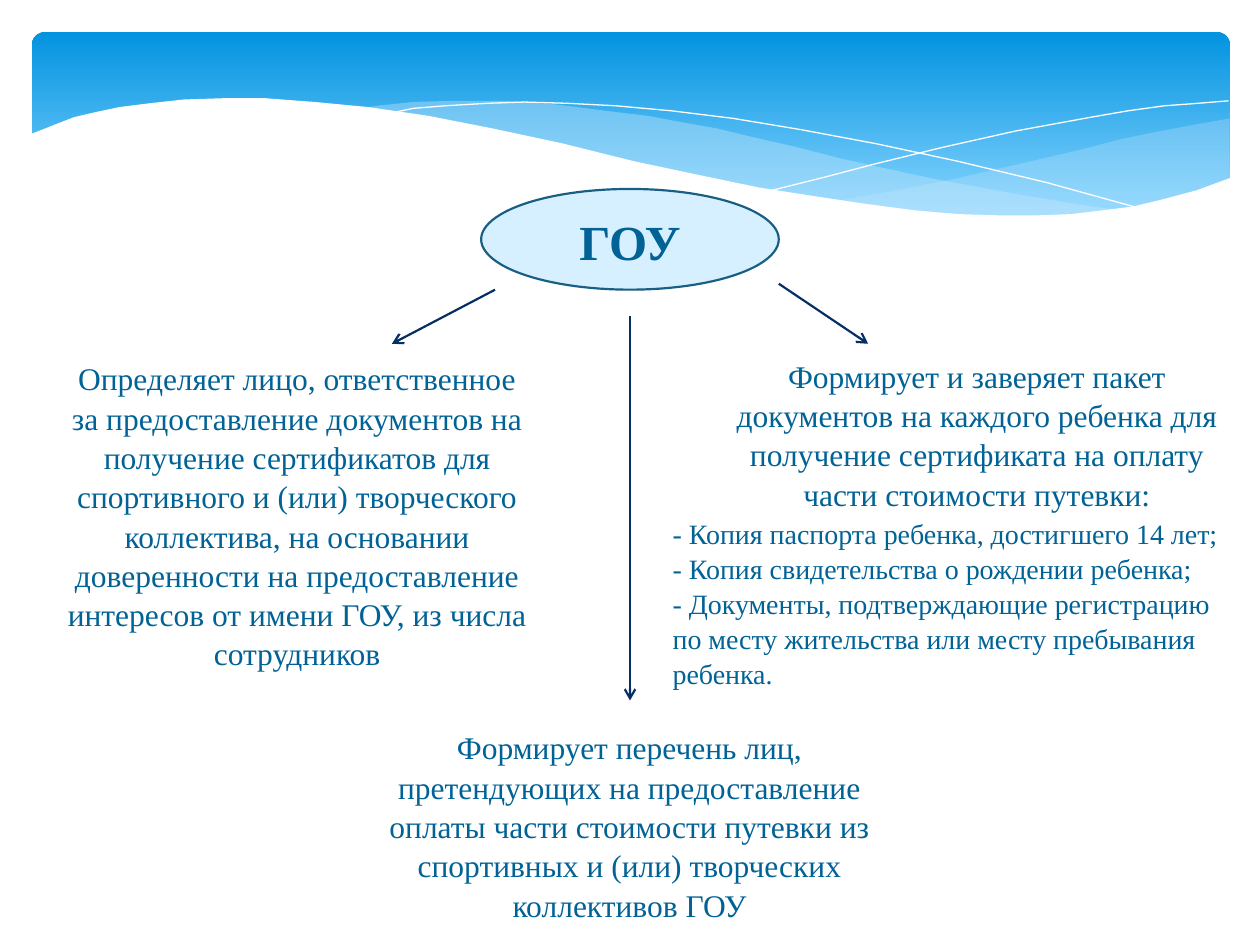
from lxml import etree
from pptx import Presentation, util as u
from pptx.dml.color import RGBColor
from pptx.enum import shapes, text
from pptx.oxml import ns

COLORS = {
    "sky": "0293E0", "light sky": "83D3FE", "wave": "C6E7FC", "white": "FFFFFF",
    "oval": "D6F0FF", "oval line": "195F84", "text": "016296", "arrow": "052E65",
}
COLORS = {name: RGBColor.from_string(value) for name, value in COLORS.items()}
FONT = "Times New Roman"

presentation = Presentation()
presentation.slide_width, presentation.slide_height = u.Cm(25.4), u.Cm(19.05)
slide = presentation.slides.add_slide(presentation.slide_layouts[6])


def write(shape, content, size, alignment, bold=False, spacing=1.04):
    shape.text_frame.word_wrap = True
    shape.text_frame.text = content
    for paragraph in shape.text_frame.paragraphs:
        paragraph.alignment = alignment
        paragraph.line_spacing = spacing
        font = paragraph.runs[0].font
        font.name, font.size, font.bold = FONT, u.Pt(size), bold
        font.color.rgb = COLORS["text"]


# Header panel with a vertical gradient
panel = slide.shapes.add_shape(shapes.MSO_SHAPE.ROUNDED_RECTANGLE,
                               u.Cm(0.64), u.Cm(0.64), u.Cm(24.16), u.Cm(3.96))
panel.adjustments[0] = 0.07
panel.shadow.inherit = False
panel.line.fill.background()
panel.fill.gradient()
panel.fill.gradient_angle = 270
for stop, color, position in zip(panel.fill.gradient_stops, ("sky", "light sky"), (0, 0.9)):
    stop.color.rgb = COLORS[color]
    stop.position = position

# Waves: points in hundredths of 2.54 cm, fill colour, opacity in percent
# A wave without a fill is an open white hairline
waves = [
    ([(976, 94), (948, 99), (921, 104), (891, 110), (861, 118), (805, 131), (753, 143),
      (706, 152), (661, 160), (691, 164), (719, 167), (745, 169), (769, 171), (803, 172),
      (835, 172), (863, 170), (889, 166), (913, 162), (935, 156), (963, 147), (976, 141)],
     "wave", 29),
    ([(893, 167), (866, 164), (807, 154), (741, 142), (668, 126), (629, 116), (598, 109),
      (569, 102), (541, 97), (514, 92), (489, 89), (442, 83), (399, 80), (361, 80),
      (328, 81), (299, 84), (286, 86), (323, 90), (362, 97), (404, 106), (449, 116),
      (530, 135), (584, 146), (634, 156), (680, 163), (722, 168), (761, 171), (796, 173),
      (828, 173), (857, 171)],
     "wave", 40),
    ([(309, 90), (328, 86), (353, 84), (387, 82), (416, 81), (450, 82), (489, 84),
      (533, 88), (582, 94), (636, 103), (695, 114), (760, 128), (831, 145), (907, 166)],
     None, None),
    ([(613, 151), (653, 141), (695, 130), (748, 117), (806, 104), (866, 93), (895, 88),
      (924, 84), (951, 82), (975, 80)],
     None, None),
    ([(977, 141), (950, 151), (920, 159), (899, 164), (875, 167), (850, 170), (823, 171),
      (793, 171), (761, 170), (726, 167), (688, 162), (648, 156), (603, 149), (555, 139),
      (503, 128), (447, 114), (391, 102), (340, 92), (292, 85), (250, 81), (211, 78),
      (177, 78), (146, 79), (119, 82), (95, 85), (76, 89), (59, 93), (46, 98), (36, 102),
      (23, 107), (23, 224), (977, 224)],
     "white", 100),
]
for points, color, opacity in waves:
    builder = slide.shapes.build_freeform(*points[0], scale=u.Cm(2.54) / 100)
    builder.add_line_segments(points[1:], close=color is not None)
    wave = builder.convert_to_shape()
    wave.shadow.inherit = False
    if color is None:
        wave.fill.background()
        wave.line.color.rgb = COLORS["white"]
        wave.line.width = u.Pt(0)
        continue
    wave.line.fill.background()
    wave.fill.solid()
    wave.fill.fore_color.rgb = COLORS[color]
    if opacity < 100:
        fill_color = wave.fill._xPr.find(".//" + ns.qn("a:srgbClr"))
        etree.SubElement(fill_color, ns.qn("a:alpha"), val=str(opacity * 1000))

# Central oval
oval = slide.shapes.add_shape(shapes.MSO_SHAPE.OVAL,
                              u.Cm(9.7), u.Cm(3.81), u.Cm(6), u.Cm(2.03))
oval.shadow.inherit = False
oval.fill.solid()
oval.fill.fore_color.rgb = COLORS["oval"]
oval.line.color.rgb = COLORS["oval line"]
oval.line.width = u.Pt(1.25)
oval.text_frame.vertical_anchor = text.MSO_ANCHOR.MIDDLE
write(oval, "ГОУ", 28, text.PP_ALIGN.CENTER, bold=True)

# Duties and the list of documents: left, top, width, height, size, alignment, wording
text_blocks = [
    (7.29, 14.53, 10.8, 4.11, 18, text.PP_ALIGN.CENTER,
     "Формирует перечень лиц, претендующих на предоставление оплаты части стоимости "
     "путевки из спортивных и (или) творческих коллективов ГОУ"),
    (1.09, 7.09, 9.8, 6.4, 18, text.PP_ALIGN.CENTER,
     "Определяет лицо, ответственное за предоставление документов на получение "
     "сертификатов для спортивного и (или) творческого коллектива, на основании "
     "доверенности на предоставление интересов от имени ГОУ, из числа сотрудников"),
    (14.5, 7.04, 10.39, 3.33, 18, text.PP_ALIGN.CENTER,
     "Формирует и заверяет пакет документов на каждого ребенка для получение "
     "сертификата на оплату части стоимости путевки:"),
    (13.31, 10.26, 11.61, 3.68, 16, text.PP_ALIGN.LEFT,
     "- Копия паспорта ребенка, достигшего 14 лет;\n"
     "- Копия свидетельства о рождении ребенка;\n"
     "- Документы, подтверждающие регистрацию по месту жительства или месту "
     "пребывания ребенка."),
]
for left, top, width, height, size, alignment, content in text_blocks:
    text_box = slide.shapes.add_textbox(u.Cm(left), u.Cm(top), u.Cm(width), u.Cm(height))
    write(text_box, content, size, alignment)

# Arrows from the oval to the duties
arrows = [(9.98, 5.84, 7.9, 6.93), (12.7, 6.38, 12.7, 14.12), (15.7, 5.72, 17.5, 6.93)]
for ends in arrows:
    arrow = slide.shapes.add_connector(shapes.MSO_CONNECTOR.STRAIGHT, *map(u.Cm, ends))
    arrow.line.color.rgb = COLORS["arrow"]
    arrow.line.width = u.Pt(1.25)
    etree.SubElement(arrow.line._get_or_add_ln(), ns.qn("a:tailEnd"), type="arrow")
    etree.SubElement(arrow._element.spPr, ns.qn("a:effectLst"))

presentation.save("out.pptx")
